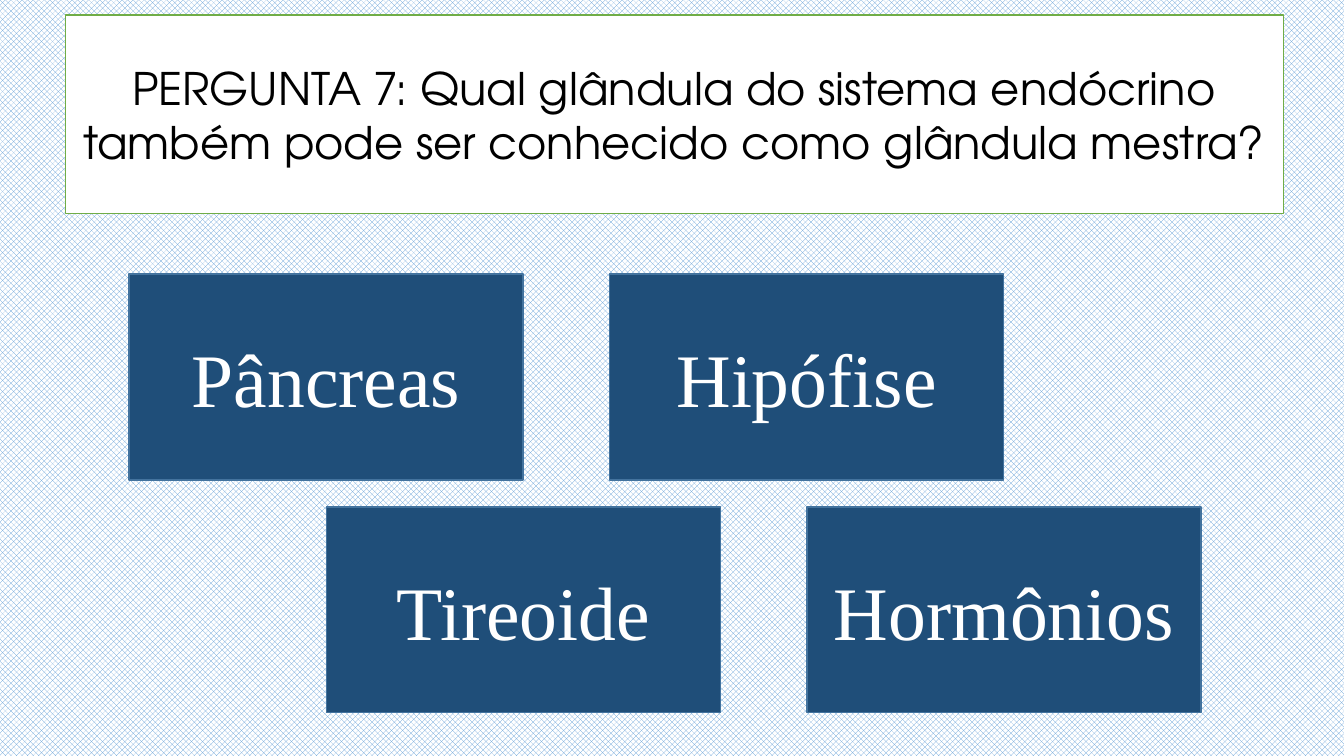
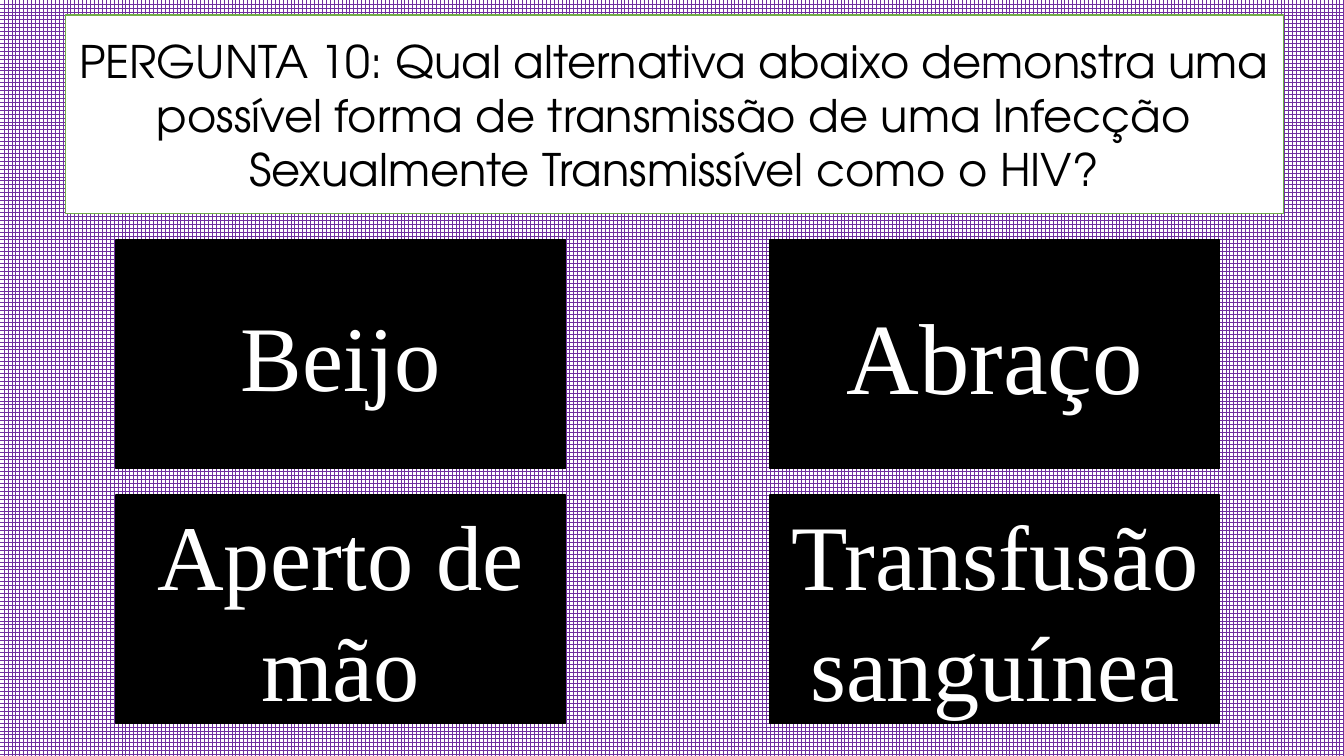
from dataclasses import dataclass

from pptx import Presentation
from pptx.dml.color import RGBColor
from pptx.enum.dml import MSO_PATTERN
from pptx.enum.shapes import MSO_SHAPE
from pptx.enum.text import MSO_ANCHOR, MSO_AUTO_SIZE, PP_ALIGN
from pptx.util import Pt

WHITE = RGBColor(0xFF, 0xFF, 0xFF)
BLACK = RGBColor(0x00, 0x00, 0x00)
GREEN = RGBColor(0x70, 0xAD, 0x47)
SKY = RGBColor(0x5B, 0x9B, 0xD5)
NAVY = RGBColor(0x1F, 0x4E, 0x79)
STEEL = RGBColor(0x43, 0x73, 0x9E)
PURPLE = RGBColor(0x70, 0x30, 0xA0)

QUESTION_FONT = "TeX Gyre Adventor"
ANSWER_FONT = "Times New Roman"
TITLE_ONLY = 5


@dataclass
class AnswerGrid:
    """Two columns of boxes in points; row_shift moves each row to the right."""
    left: float
    top: float
    width: float
    height: float
    column_step: float
    row_step: float
    row_shift: float
    fill: RGBColor
    line: RGBColor


STAGGERED = AnswerGrid(92.2, 195.8, 281.5, 147, 343.2, 166.3, 141, NAVY, STEEL)
ALIGNED = AnswerGrid(82.8, 171.4, 321.1, 163.4, 467.3, 182.2, 0, BLACK, BLACK)


def place(shape, left, top, width, height):
    shape.left, shape.top = Pt(left), Pt(top)
    shape.width, shape.height = Pt(width), Pt(height)


def style_box(shape, fill, line):
    shape.fill.solid()
    shape.fill.fore_color.rgb = fill
    shape.line.color.rgb = line
    shape.line.width = Pt(1)


def write_centred(shape, text, font_name, size, color):
    frame = shape.text_frame
    frame.word_wrap = True
    frame.auto_size = MSO_AUTO_SIZE.NONE
    frame.vertical_anchor = MSO_ANCHOR.MIDDLE
    paragraph = frame.paragraphs[0]
    paragraph.alignment = PP_ALIGN.CENTER
    run = paragraph.add_run()
    run.text = text
    run.font.name = font_name
    run.font.size = Pt(size)
    run.font.color.rgb = color


def set_background(slide, pattern, color):
    fill = slide.background.fill
    fill.patterned()
    fill.pattern = pattern
    fill.fore_color.rgb = color
    fill.back_color.rgb = WHITE


def add_question(slide, text):
    title = slide.shapes.title
    place(title, 46.8, 10.8, 869.8, 141.8)
    style_box(title, WHITE, GREEN)
    write_centred(title, text, QUESTION_FONT, 32, BLACK)


def add_answers(slide, grid, answers):
    """Add (text, size) pairs row by row."""
    for index, (text, size) in enumerate(answers):
        row, column = divmod(index, 2)
        left = grid.left + column * grid.column_step + row * grid.row_shift
        top = grid.top + row * grid.row_step
        box = slide.shapes.add_shape(MSO_SHAPE.RECTANGLE, Pt(left), Pt(top),
                                     Pt(grid.width), Pt(grid.height))
        box.shadow.inherit = False
        style_box(box, grid.fill, grid.line)
        write_centred(box, text, ANSWER_FONT, size, WHITE)


def add_quiz_slide(presentation, pattern, color, question, grid, answers):
    slide = presentation.slides.add_slide(presentation.slide_layouts[TITLE_ONLY])
    set_background(slide, pattern, color)
    add_question(slide, question)
    add_answers(slide, grid, answers)


def main():
    presentation = Presentation()
    presentation.slide_width, presentation.slide_height = Pt(960), Pt(540)
    add_quiz_slide(
        presentation, MSO_PATTERN.SOLID_DIAMOND, SKY,
        "PERGUNTA 7: Qual glândula do sistema endócrino também pode ser "
        "conhecido como glândula mestra?",
        STAGGERED,
        [("Pâncreas", 54), ("Hipófise", 54), ("Tireoide", 54), ("Hormônios", 54)])
    add_quiz_slide(
        presentation, MSO_PATTERN.LARGE_GRID, PURPLE,
        "PERGUNTA 10: Qual alternativa abaixo demonstra uma possível forma de "
        "transmissão de uma Infecção Sexualmente Transmissível como o HIV?",
        ALIGNED,
        [("Beijo", 66), ("Abraço", 72), ("Aperto de mão", 66),
         ("Transfusão sanguínea", 66)])
    presentation.save("out.pptx")


if __name__ == "__main__":
    main()
